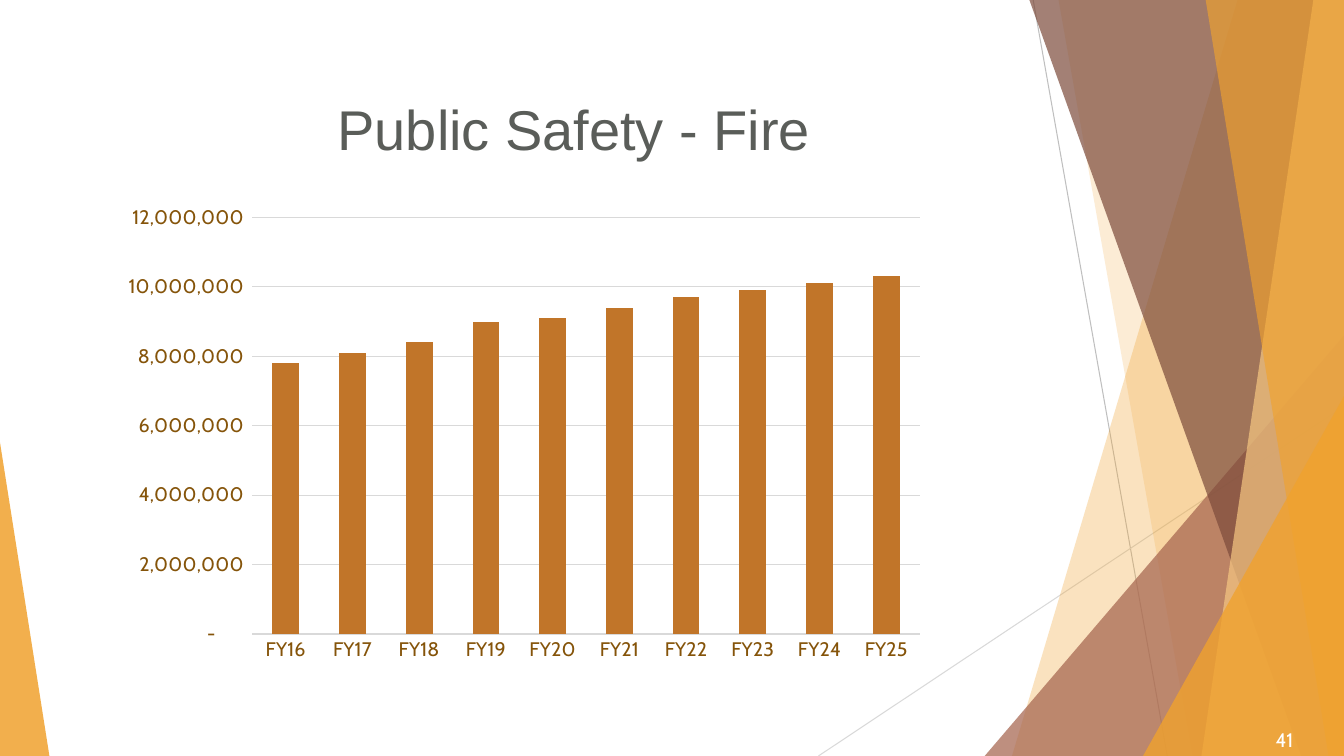
from lxml import etree
from pptx import Presentation
from pptx.chart.data import CategoryChartData
from pptx.dml.color import RGBColor
from pptx.enum.chart import XL_CHART_TYPE, XL_TICK_MARK
from pptx.enum.shapes import MSO_CONNECTOR, MSO_SHAPE
from pptx.enum.text import MSO_ANCHOR, PP_ALIGN
from pptx.oxml import parse_xml
from pptx.oxml.ns import nsdecls, qn
from pptx.util import Pt

COLUMNS = XL_CHART_TYPE.COLUMN_CLUSTERED
NO_TICK = XL_TICK_MARK.NONE
STRAIGHT = MSO_CONNECTOR.STRAIGHT
TRIANGLE = MSO_SHAPE.ISOSCELES_TRIANGLE
BOTTOM, MIDDLE = MSO_ANCHOR.BOTTOM, MSO_ANCHOR.MIDDLE
LEFT, RIGHT = PP_ALIGN.LEFT, PP_ALIGN.RIGHT

# Content
WIDTH, HEIGHT = 960, 540
BAND_TOP = -0.6
COLORS = {
    "background": "FFFFFF", "amber": "F0A22E", "sand": "F6C782",
    "rust": "A5644E", "brown": "7C4B3B", "gray": "BFBFBF",
    "light gray": "D9D9D9", "title": "5A5D59", "number": "FFFFFF",
    "axis": "85540A", "columns": "C17529", "chart": "000000",
}
# Start x, start y, end x, end y, color
LINES = [
    (738, 0, 833.8, HEIGHT, "gray"),
    (WIDTH, 290.2, 584.6, HEIGHT, "light gray"),
]
# Bands run to the right edge: ("band", top x, bottom x, color, opacity)
# Triangles: ("triangle", left, top, right, apex position, color, opacity)
DECORATIONS = [
    ("band", 884.2, 722.9, "amber", 30),
    ("band", 756, 851.8, "amber", 20),
    ("triangle", 703.4, 239.8, WIDTH, 1, "rust", 72),
    ("band", 735.1, 929.5, "brown", 70),
    ("band", 938.2, 858.2, "sand", 70),
    ("band", 861.1, 949, "amber", 65),
    ("triangle", 816.5, 283, WIDTH, 1, "amber", 80),
    ("triangle", 0, 316.1, 35.3, 0, "amber", 85),
]
# Text, box, size, font, color, anchor, alignment
TEXTS = [
    ("Public Safety - Fire", (234, 28.8, 590.4, 90), 40, "Arial", "title", BOTTOM, LEFT),
    ("41", (866.2, 516.2, 64.8, 23.8), 14, "Cabin", "number", MIDDLE, RIGHT),
]
CHART_BOX = (79.9, 141.8, 577.4, 356.4)
PLOT_LAYOUT = {"x": 0.174, "y": 0.038, "w": 0.826, "h": 0.835}
NUMBER_FORMAT = '_(* #,##0_);_(* \\(#,##0\\);_(* "-"??_);_('
FIRE_BUDGET = {
    "FY16": 7800000, "FY17": 8100000, "FY18": 8400000, "FY19": 9000000,
    "FY20": 9100000, "FY21": 9400000, "FY22": 9700000, "FY23": 9900000,
    "FY24": 10100000, "FY25": 10300000,
}


def color(name):
    return RGBColor.from_string(COLORS[name])


def points(values):
    return [Pt(value) for value in values]


def paint(shape, name, opacity):
    shape.shadow.inherit = False
    shape.fill.solid()
    shape.fill.fore_color.rgb = color(name)
    shape.line.fill.background()
    fill_color = shape.fill._xPr.find(qn("a:solidFill"))[0]
    etree.SubElement(fill_color, qn("a:alpha"), val=str(opacity * 1000))


def add_line(slide, start_x, start_y, end_x, end_y, name):
    line = slide.shapes.add_connector(STRAIGHT, *points((start_x, start_y, end_x, end_y)))
    line.line.color.rgb = color(name)
    line.line.width = Pt(0.75)
    etree.SubElement(line._element.spPr, qn("a:effectLst"))


def add_band(slide, top_x, bottom_x, name, opacity):
    builder = slide.shapes.build_freeform(Pt(top_x), Pt(BAND_TOP))
    corners = [(WIDTH, BAND_TOP), (WIDTH, HEIGHT), (bottom_x, HEIGHT)]
    builder.add_line_segments([points(corner) for corner in corners], close=True)
    paint(builder.convert_to_shape(), name, opacity)


def add_triangle(slide, left, top, right, apex, name, opacity):
    box = points((left, top, right - left, HEIGHT - top))
    shape = slide.shapes.add_shape(TRIANGLE, *box)
    shape.adjustments[0] = apex
    paint(shape, name, opacity)


def add_text(slide, text, box, size, font, name, anchor, alignment):
    frame = slide.shapes.add_textbox(*points(box)).text_frame
    frame.word_wrap = True
    frame.vertical_anchor = anchor
    paragraph = frame.paragraphs[0]
    paragraph.alignment = alignment
    run = paragraph.add_run()
    run.text = text
    run.font.size = Pt(size)
    run.font.name = font
    run.font.color.rgb = color(name)


def style_font(font, size, name):
    font.size = Pt(size)
    font.name = "Cabin"
    font.color.rgb = color(name)


def add_budget_chart(slide):
    data = CategoryChartData()
    data.categories = list(FIRE_BUDGET)
    data.add_series("Series 1", list(FIRE_BUDGET.values()))
    chart = slide.shapes.add_chart(COLUMNS, *points(CHART_BOX), data).chart
    chart.has_legend = False
    chart.has_title = False
    style_font(chart.font, 10, "chart")

    # Columns
    plot = chart.plots[0]
    plot.gap_width = 150
    plot.vary_by_categories = False
    series_fill = plot.series[0].format.fill
    series_fill.solid()
    series_fill.fore_color.rgb = color("columns")

    # Axes and gridlines
    for axis in (chart.category_axis, chart.value_axis):
        axis.major_tick_mark = axis.minor_tick_mark = NO_TICK
        axis.format.line.fill.background()
        style_font(axis.tick_labels.font, 14, "axis")
    value_axis = chart.value_axis
    value_axis.minimum_scale = 0
    value_axis.maximum_scale = 12000000
    value_axis.major_unit = 2000000
    value_axis.tick_labels.number_format = NUMBER_FORMAT
    value_axis.tick_labels.number_format_is_linked = False
    value_axis.has_major_gridlines = True
    gridline = value_axis.major_gridlines.format.line
    gridline.color.rgb = color("light gray")
    gridline.width = Pt(0.75)

    # Inner plot position, as fractions of the chart
    modes = '<c:layoutTarget val="inner"/><c:xMode val="edge"/><c:yMode val="edge"/>'
    sizes = "".join(f'<c:{key} val="{value}"/>' for key, value in PLOT_LAYOUT.items())
    layout = parse_xml(
        f'<c:layout {nsdecls("c")}><c:manualLayout>{modes}{sizes}</c:manualLayout></c:layout>'
    )
    plot_area = chart._chartSpace.chart.plotArea
    for old_layout in plot_area.findall(qn("c:layout")):
        plot_area.remove(old_layout)
    plot_area.insert(0, layout)


def main():
    presentation = Presentation()
    presentation.slide_width, presentation.slide_height = points((WIDTH, HEIGHT))
    slide = presentation.slides.add_slide(presentation.slide_layouts[6])
    slide.background.fill.solid()
    slide.background.fill.fore_color.rgb = color("background")

    # Side decoration, back to front
    for line in LINES:
        add_line(slide, *line)
    builders = {"band": add_band, "triangle": add_triangle}
    for kind, *details in DECORATIONS:
        builders[kind](slide, *details)

    # Title, slide number and chart
    for text in TEXTS:
        add_text(slide, *text)
    add_budget_chart(slide)
    presentation.save("out.pptx")


if __name__ == "__main__":
    main()
